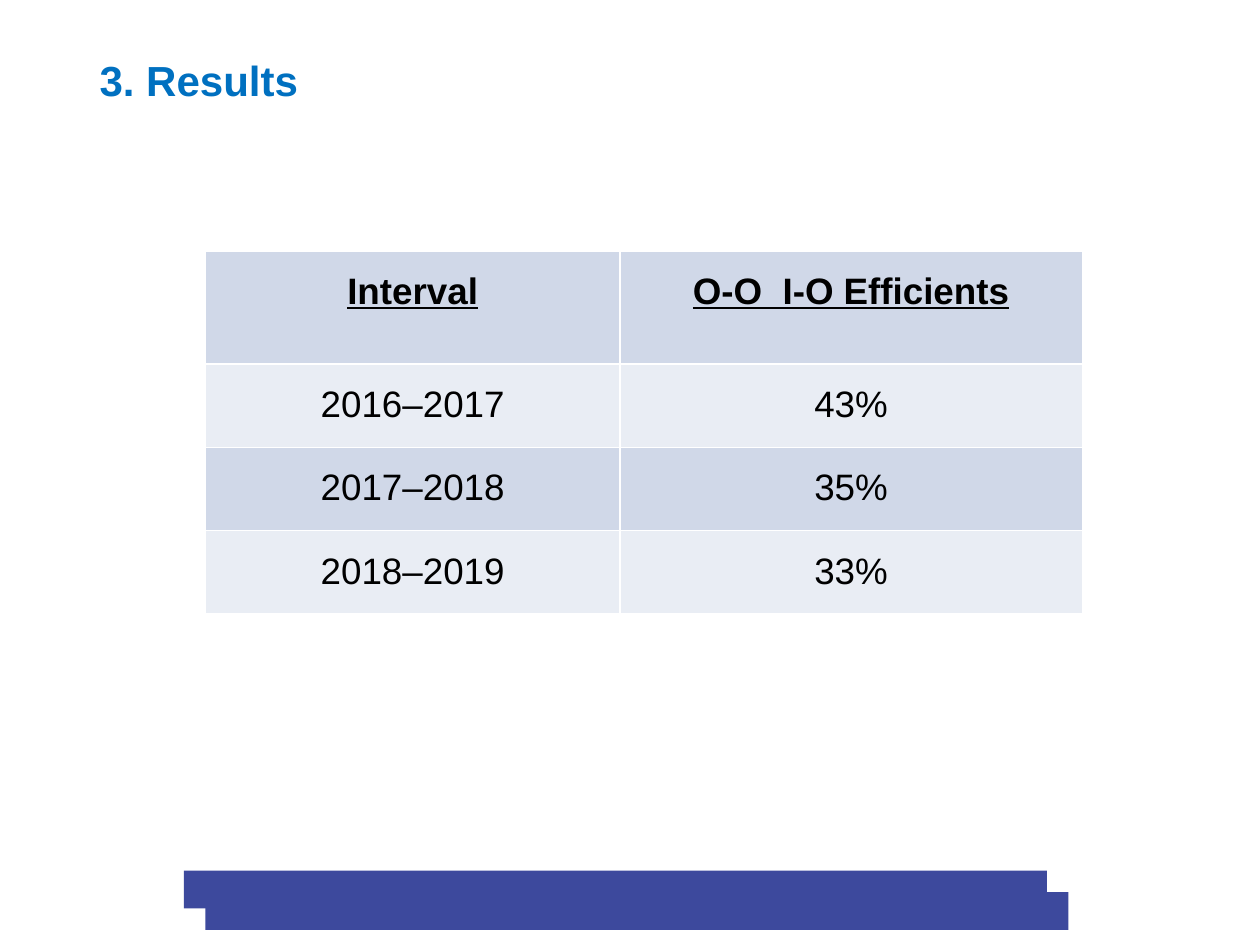
from dataclasses import dataclass

from lxml import etree
from pptx import Presentation
from pptx import util as u
from pptx.dml.color import RGBColor
from pptx.enum import shapes, text
from pptx.oxml import ns


@dataclass(frozen=True)
class Theme:
    font: str = "Arial"
    title_size: int = 24
    table_size: int = 21
    title: str = "0070C0"
    ink: str = "000000"
    bands: tuple = ("D0D8E8", "E9EDF4")
    border: str = "FFFFFF"
    footer: str = "3D499D"


THEME = Theme()
WIDTH, HEIGHT = 10, 7.5
RESULTS = [
    ("Interval", "O-O  I-O Efficients"),
    ("2016–2017", "43%"),
    ("2017–2018", "35%"),
    ("2018–2019", "33%"),
]
COLUMNS = (3.29, 3.67)
HEADER_ROW, RESULT_ROW = 0.9, 0.66
TABLE_LEFT, TABLE_TOP = 1.63, 1.99
FOOTER_STEP = 0.17


def inches(*lengths):
    return [u.Inches(length) for length in lengths]


def style(paragraph, size, color, bold=False, underline=False):
    font = paragraph.font
    font.name = THEME.font
    font.size = u.Pt(size)
    font.bold = bold
    font.underline = underline
    font.color.rgb = RGBColor.from_string(color)


def add_title(slide, wording):
    title = slide.shapes.title
    title.left, title.top, title.width, title.height = inches(0.69, 0.28, 4.5, 0.71)
    frame = title.text_frame
    frame.text = wording
    frame.vertical_anchor = text.MSO_ANCHOR.MIDDLE
    heading = frame.paragraphs[0]
    heading.alignment = text.PP_ALIGN.LEFT
    style(heading, THEME.title_size, THEME.title, bold=True)


def add_borders(cell):
    properties = cell._tc.get_or_add_tcPr()
    for side in ("lnL", "lnR", "lnT", "lnB"):
        line = etree.SubElement(properties, ns.qn(f"a:{side}"), w=str(u.Pt(1)))
        fill = etree.SubElement(line, ns.qn("a:solidFill"))
        etree.SubElement(fill, ns.qn("a:srgbClr"), val=THEME.border)


def fill_cell(cell, wording, band, header):
    add_borders(cell)
    cell.fill.solid()
    cell.fill.fore_color.rgb = RGBColor.from_string(band)
    cell.margin_left = cell.margin_right = u.Inches(0.07)
    cell.margin_top = cell.margin_bottom = 0
    cell.text = wording
    entry = cell.text_frame.paragraphs[0]
    entry.alignment = text.PP_ALIGN.CENTER
    entry.line_spacing = 1.5
    entry.space_after = u.Pt(12)
    style(entry, THEME.table_size, THEME.ink, bold=header, underline=header)


def add_results(slide, results):
    heights = [HEADER_ROW] + [RESULT_ROW] * (len(results) - 1)
    place = inches(TABLE_LEFT, TABLE_TOP, sum(COLUMNS), sum(heights))
    table = slide.shapes.add_table(len(results), len(COLUMNS), *place).table
    for column, width in zip(table.columns, COLUMNS):
        column.width = u.Inches(width)
    for index, (row, height, entries) in enumerate(zip(table.rows, heights, results)):
        row.height = u.Inches(height)
        band = THEME.bands[index % len(THEME.bands)]
        for cell, entry in zip(row.cells, entries):
            fill_cell(cell, entry, band, header=index == 0)


def add_footer_bar(slide, step):
    offset = step * FOOTER_STEP
    place = inches(1.46 + offset, 6.91 + offset, 6.85, 0.3)
    bar = slide.shapes.add_shape(shapes.MSO_SHAPE.RECTANGLE, *place)
    bar.shadow.inherit = False
    bar.fill.solid()
    bar.fill.fore_color.rgb = RGBColor.from_string(THEME.footer)
    bar.line.fill.background()


def main():
    deck = Presentation()
    deck.slide_width, deck.slide_height = inches(WIDTH, HEIGHT)
    slide = deck.slides.add_slide(deck.slide_layouts[5])
    add_title(slide, "3. Results")
    add_results(slide, RESULTS)
    for step in range(2):
        add_footer_bar(slide, step)
    deck.save("out.pptx")


if __name__ == "__main__":
    main()
